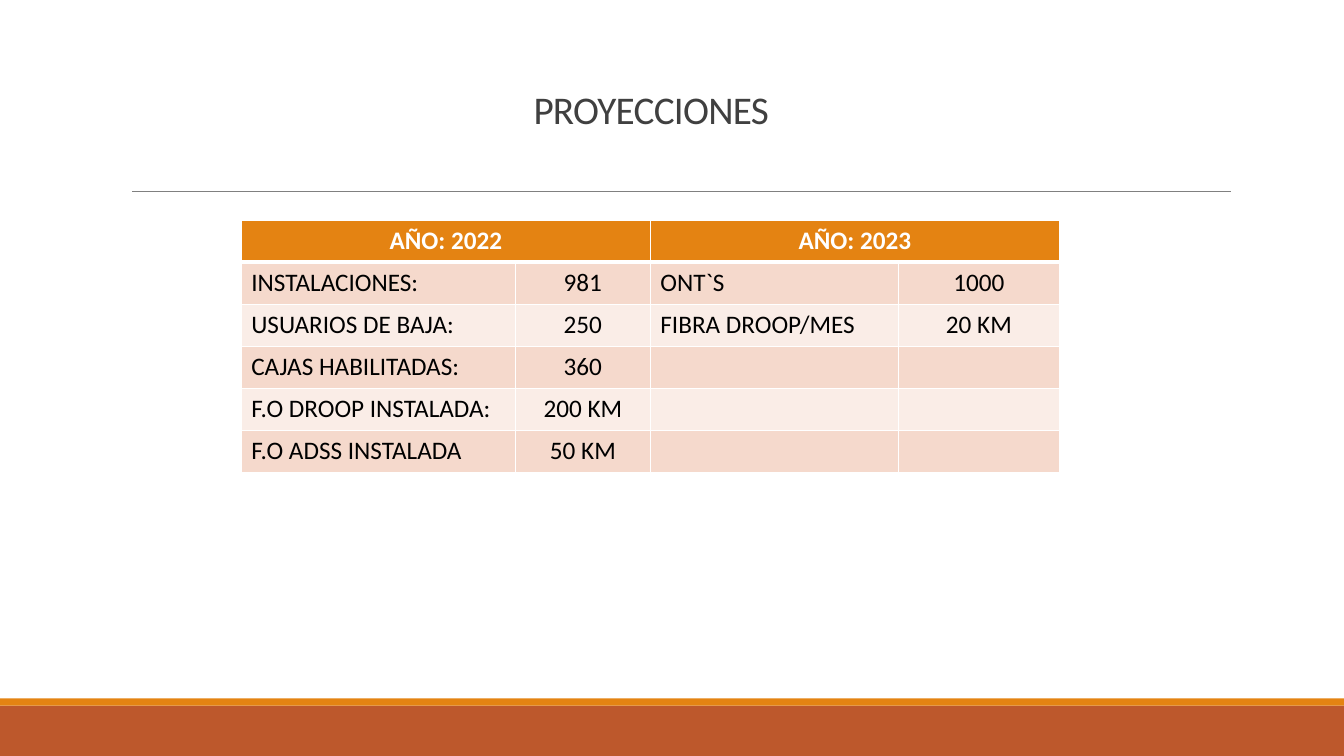
from dataclasses import dataclass

from pptx import Presentation
from pptx.dml.color import RGBColor as RGB
from pptx.enum.shapes import MSO_CONNECTOR as Link, MSO_SHAPE as Form
from pptx.enum.text import MSO_ANCHOR as Anchor, MSO_AUTO_SIZE as Fit, PP_ALIGN as Align
from pptx.oxml.ns import qn
from pptx.util import Cm, Pt
from lxml.etree import SubElement as Sub


@dataclass(frozen=True)
class Theme:
    font: str = "Calibri"
    title: int = 28
    body: int = 18
    ink: str = "404040"
    black: str = "000000"
    white: str = "FFFFFF"
    rule: str = "808080"
    orange: str = "E48312"
    rust: str = "BD582C"
    bands: tuple = ("F5D9CC", "FAEDE7")


@dataclass(frozen=True)
class Box:
    """A region, in centimetres."""
    left: float
    top: float
    width: float
    height: float

    def place(self):
        return [Cm(n) for n in (self.left, self.top, self.width, self.height)]


THEME = Theme()
PAGE = Box(0, 0, 33.87, 19.05)
COLS = (6.91, 3.4, 6.25, 4.06)
YEARS = ("AÑO: 2022", "AÑO: 2023")
ROWS = (
    ("INSTALACIONES:", "981", "ONT`S", "1000"),
    ("USUARIOS DE BAJA:", "250", "FIBRA DROOP/MES", "20 KM"),
    ("CAJAS HABILITADAS:", "360", "", ""),
    ("F.O DROOP INSTALADA:", "200 KM", "", ""),
    ("F.O ADSS INSTALADA", "50 KM", "", ""),
)


def write(frame, text, size, color, align, bold=False):
    """Add one styled run to the first paragraph and return it."""
    para = frame.paragraphs[0]
    para.alignment = align
    run = para.add_run()
    run.text = text
    font = run.font
    font.name, font.size, font.bold = THEME.font, Pt(size), bold
    font.color.rgb = RGB.from_string(color)
    return run


def add_bar(slide, box, color):
    bar = slide.shapes.add_shape(Form.RECTANGLE, *box.place())
    bar.shadow.inherit = False
    bar.fill.solid()
    bar.fill.fore_color.rgb = RGB.from_string(color)
    bar.line.fill.background()


def add_foot(slide, box):
    """Fill the box with a thin orange strip above a rust band."""
    strip = 0.18
    add_bar(slide, Box(box.left, box.top + strip, box.width, box.height - strip), THEME.rust)
    add_bar(slide, Box(box.left, box.top, box.width, strip), THEME.orange)


def add_rule(slide, box):
    left, top, width, _ = box.place()
    line = slide.shapes.add_connector(Link.STRAIGHT, left, top, left + width, top)
    line.line.color.rgb = RGB.from_string(THEME.rule)
    line.line.width = Pt(0.5)
    Sub(line._element.spPr, qn("a:effectLst"))


def add_title(slide, box, text):
    title = slide.shapes.title
    title.left, title.top, title.width, title.height = box.place()
    frame = title.text_frame
    frame.word_wrap = True
    frame.auto_size = Fit.NONE
    frame.vertical_anchor = Anchor.BOTTOM
    run = write(frame, text, THEME.title, THEME.ink, Align.CENTER)
    run.font._element.set("spc", "-50")
    frame.paragraphs[0].line_spacing = 0.85


def paint(cell, color, base):
    """Give the cell white borders, the lower one base points wide, and a fill."""
    props = cell._tc.get_or_add_tcPr()
    for side, width in (("L", 1), ("R", 1), ("T", 1), ("B", base)):
        edge = Sub(props, qn(f"a:ln{side}"), w=str(Pt(width)))
        Sub(Sub(edge, qn("a:solidFill")), qn("a:srgbClr"), val=THEME.white)
    cell.fill.solid()
    cell.fill.fore_color.rgb = RGB.from_string(color)


def add_grid(slide, box):
    count = len(ROWS) + 1
    grid = slide.shapes.add_table(count, len(COLS), *box.place()).table
    for col, width in zip(grid.columns, COLS):
        col.width = Cm(width)
    for row in grid.rows:
        row.height = Cm(box.height / count)

    for col in range(len(COLS)):
        paint(grid.cell(0, col), THEME.orange, 3)
    for pair, year in enumerate(YEARS):
        head = grid.cell(0, 2 * pair)
        head.merge(grid.cell(0, 2 * pair + 1))
        write(head.text_frame, year, THEME.body, THEME.white, Align.CENTER, True)

    for row, texts in enumerate(ROWS, 1):
        for col, text in enumerate(texts):
            cell = grid.cell(row, col)
            paint(cell, THEME.bands[(row - 1) % 2], 1)
            if text:
                align = Align.CENTER if col % 2 else Align.LEFT
                write(cell.text_frame, text, THEME.body, THEME.black, align)


def main():
    deck = Presentation()
    deck.slide_width, deck.slide_height = Cm(PAGE.width), Cm(PAGE.height)
    slide = deck.slides.add_slide(deck.slide_layouts[5])
    foot = 1.45
    add_foot(slide, Box(0, PAGE.height - foot, PAGE.width, foot))
    add_rule(slide, Box(3.33, 4.82, 27.68, 0))
    add_title(slide, Box(2.44, 2.06, 27.94, 1.4), "PROYECCIONES")
    add_grid(slide, Box(6.08, 5.55, sum(COLS), 6.35))
    deck.save("out.pptx")


if __name__ == "__main__":
    main()
